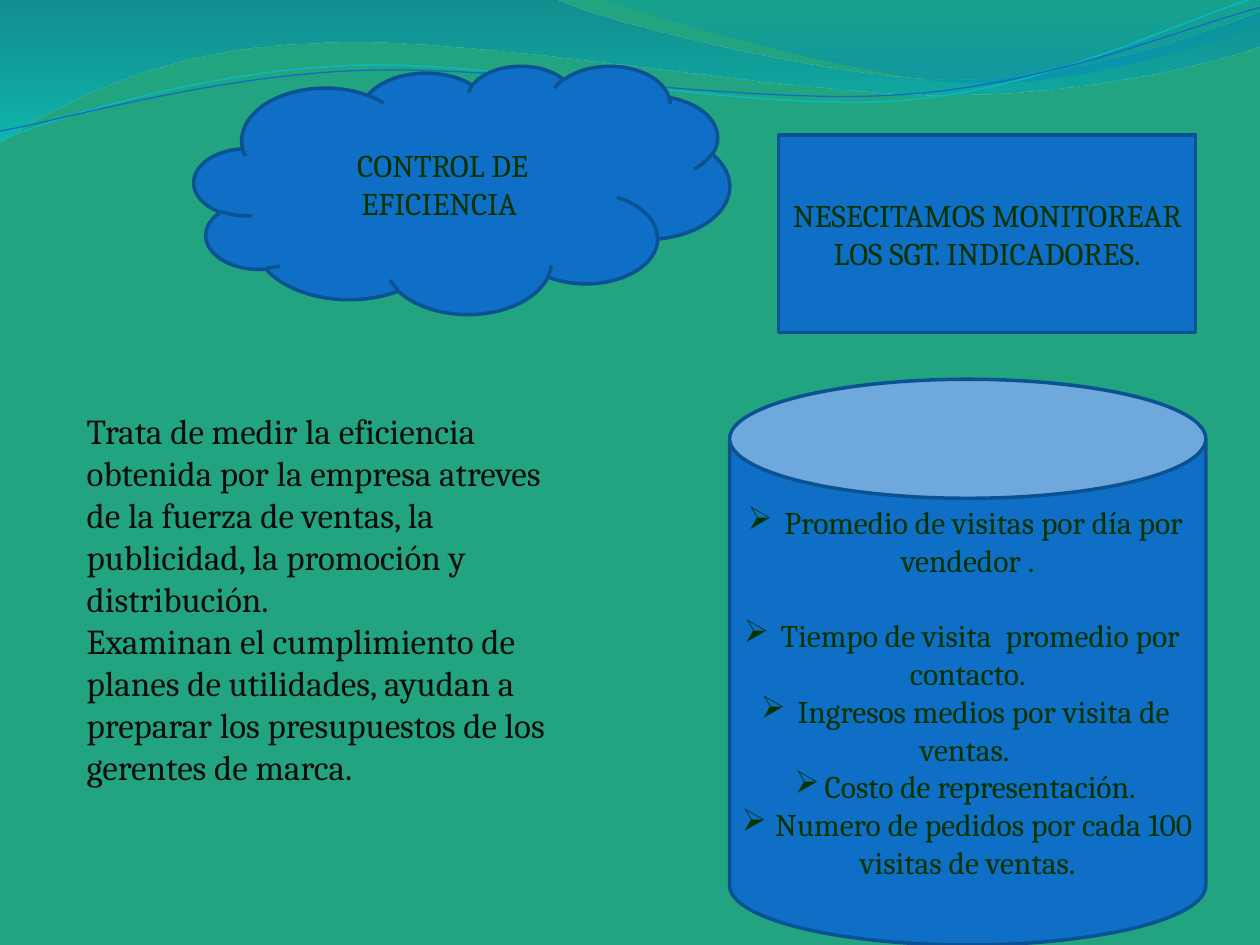
from math import cos, radians, sin

from lxml.etree import SubElement
from pptx import Presentation
from pptx.dml.color import RGBColor
from pptx.enum.shapes import MSO_SHAPE
from pptx.enum.text import MSO_ANCHOR, MSO_AUTO_SIZE, PP_ALIGN
from pptx.oxml import parse_xml
from pptx.oxml.ns import nsdecls, qn
from pptx.util import Inches, Pt

BACKGROUND, BLUE, DARK_BLUE = "22A481", "0F6FC6", "0B5292"
DARK_GREEN, NEAR_BLACK = "003300", "0D0D0D"
LINE_TILT = -2.7
LINE_CENTER = (4.99, 0.58)

# Each wave is a list of steps: two numbers draw a line, six a Bézier curve
LEFT_WAVE = [(0, 0), (4.4, -0.01), (4.76, 0.17, 6.64, 0.63, 7.58, 0.63),
             (8.53, 0.63, 9.58, 0.26, 10, 0.09), (10.01, 0.36),
             (9.83, 0.44, 8.7, 0.76, 7.46, 0.75),
             (6.22, 0.75, 3.82, 0.28, 2.57, 0.34),
             (1.29, 0.36, 0.46, 0.83, -0.01, 1.13), (0, 0)]
RIGHT_WAVE = [(4.79, -0.01), (5.09, 0.11, 6.82, 0.62, 7.69, 0.65),
              (8.56, 0.69, 9.61, 0.32, 10, 0.21), (10, 0), (4.79, -0.01)]
CYAN_LINE = [(0, 1.11), (0.48, 0.93, 1.58, 0.57, 2.77, 0.52),
             (3.95, 0.47, 5.93, 0.89, 7.13, 0.8),
             (8.33, 0.71, 9.38, 0.15, 9.98, -0.02)]
BLUE_LINE = [(0, 1.04), (0.47, 0.96, 1.64, 0.61, 2.83, 0.56),
             (4.03, 0.51, 5.97, 0.84, 7.17, 0.75),
             (8.36, 0.67, 9.41, 0.21, 10, 0.06)]

DESCRIPTION = [
    "Trata de medir la eficiencia obtenida por la empresa atreves de la "
    "fuerza de ventas, la publicidad, la promoción y distribución.",
    "Examinan el cumplimiento de planes de utilidades, ayudan a preparar "
    "los presupuestos de los gerentes de marca.",
]
INDICATORS = [
    " Promedio de visitas por día por vendedor .",
    " Tiempo de visita  promedio por  contacto.",
    " Ingresos medios por visita de ventas. ",
    "Costo de representación.",
    " Numero de pedidos por cada 100 visitas de ventas.",
]


def color(value):
    return RGBColor.from_string(value)


def write_text(shape, lines, size=18, text_color=DARK_GREEN,
               align=PP_ALIGN.CENTER, anchor=MSO_ANCHOR.MIDDLE, bullet=None):
    frame = shape.text_frame
    frame.word_wrap = True
    frame.vertical_anchor = anchor
    for index, line in enumerate(lines):
        paragraph = frame.add_paragraph() if index else frame.paragraphs[0]
        paragraph.alignment = align
        run = paragraph.add_run()
        run.text = line
        run.font.name = "Cambria"
        run.font.size = Pt(size)
        run.font.color.rgb = color(text_color)
        if bullet:
            properties = paragraph._p.get_or_add_pPr()
            SubElement(properties, qn("a:buFont"), typeface="Wingdings")
            SubElement(properties, qn("a:buChar"), char=bullet)
    return frame


def add_panel(slide, kind, left, top, width, height, lines, **text_format):
    shape = slide.shapes.add_shape(kind, Inches(left), Inches(top),
                                   Inches(width), Inches(height))
    shape.shadow.inherit = False
    shape.fill.solid()
    shape.fill.fore_color.rgb = color(BLUE)
    shape.line.color.rgb = color(DARK_BLUE)
    shape.line.width = Pt(2)
    return write_text(shape, lines, **text_format)


def step_points(step):
    return list(zip(step[::2], step[1::2]))


def turn(step, degrees):
    """Turn the points of a step about the centre of the wave lines."""
    angle = radians(degrees)
    center_x, center_y = LINE_CENTER
    turned = []
    for x, y in step_points(step):
        x, y = x - center_x, y - center_y
        turned += [center_x + x * cos(angle) - y * sin(angle),
                   center_y + x * sin(angle) + y * cos(angle)]
    return tuple(turned)


def add_curve(slide, steps, close):
    """Build a freeform through the step ends, then bend its segments."""
    ends = [(Inches(x), Inches(y)) for x, y in (step[-2:] for step in steps)]
    builder = slide.shapes.build_freeform(*ends[0])
    builder.add_line_segments(ends[1:], close=close)
    shape = builder.convert_to_shape()
    shape.shadow.inherit = False
    shape.fill.background()
    segments = shape._element.spPr.findall(".//" + qn("a:lnTo"))
    for segment, step in zip(segments, steps[1:]):
        if len(step) == 6:
            curve = parse_xml(f'<a:cubicBezTo {nsdecls("a")}/>')
            for x, y in step_points(step):
                SubElement(curve, qn("a:pt"),
                           x=str(Inches(x) - shape.left),
                           y=str(Inches(y) - shape.top))
            segment.getparent().replace(segment, curve)
    return shape


def add_wave(slide, steps, stops):
    """Add a wave with a vertical gradient of (position, colour, opacity)."""
    shape = add_curve(slide, steps, close=True)
    shape.line.fill.background()
    stop_xml = "".join(
        f'<a:gs pos="{position * 1000}"><a:srgbClr val="{value}">'
        f'<a:alpha val="{opacity * 1000}"/></a:srgbClr></a:gs>'
        for position, value, opacity in stops)
    gradient = parse_xml(
        f'<a:gradFill {nsdecls("a")}><a:gsLst>{stop_xml}</a:gsLst>'
        '<a:lin ang="5400000" scaled="0"/></a:gradFill>')
    properties = shape._element.spPr
    properties.replace(properties.find(qn("a:noFill")), gradient)


def add_wave_line(slide, steps, line_color, width):
    level_steps = [turn(step, -LINE_TILT) for step in steps]
    shape = add_curve(slide, level_steps, close=False)
    shape.rotation = LINE_TILT
    shape.line.color.rgb = color(line_color)
    shape.line.width = Pt(width)


def main():
    presentation = Presentation()
    presentation.slide_width = Inches(10)
    presentation.slide_height = Inches(7.5)
    slide = presentation.slides.add_slide(presentation.slide_layouts[6])
    slide.background.fill.solid()
    slide.background.fill.fore_color.rgb = color(BACKGROUND)

    # Waves along the top
    add_wave(slide, LEFT_WAVE, [(0, "0074A1", 45), (100, "00C6CF", 55)])
    add_wave(slide, RIGHT_WAVE, [(0, "00A1A9", 30), (80, "008BBF", 45)])
    add_wave_line(slide, CYAN_LINE, "0AB8BF", 0.85)
    add_wave_line(slide, BLUE_LINE, BLUE, 0.75)

    # Heading and description
    add_panel(slide, MSO_SHAPE.CLOUD, 1.54, 0.52, 4.25, 1.97,
              ["CONTROL DE EFICIENCIA "])
    description = slide.shapes.add_textbox(Inches(0.59), Inches(3.2),
                                           Inches(3.94), Inches(3.13))
    frame = write_text(description, DESCRIPTION, size=20,
                       text_color=NEAR_BLACK, align=PP_ALIGN.LEFT,
                       anchor=MSO_ANCHOR.TOP)
    frame.auto_size = MSO_AUTO_SIZE.SHAPE_TO_FIT_TEXT

    # Indicators, with a gap after the first
    indicators = add_panel(slide, MSO_SHAPE.CAN, 5.79, 3.01, 3.78, 4.49,
                           INDICATORS, bullet="Ø")
    indicators.paragraphs[0].space_after = Pt(21.6)
    add_panel(slide, MSO_SHAPE.RECTANGLE, 6.18, 1.07, 3.31, 1.57,
              ["NESECITAMOS MONITOREAR LOS SGT. INDICADORES."])

    presentation.save("out.pptx")


if __name__ == "__main__":
    main()
